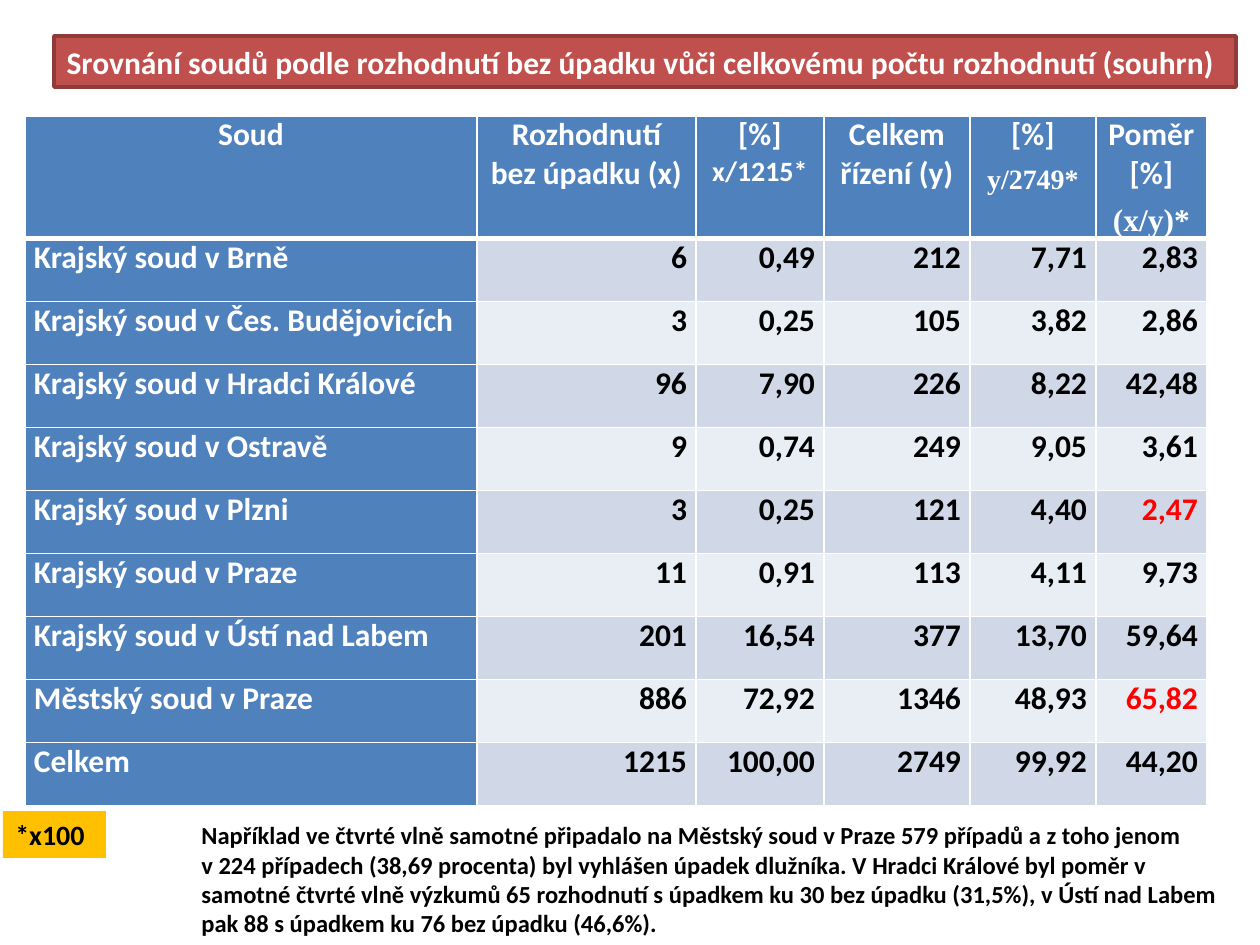
from lxml.etree import SubElement
from pptx import Presentation
from pptx.dml.color import RGBColor as RGB
from pptx.enum.shapes import MSO_SHAPE as Shape
from pptx.enum.text import MSO_ANCHOR as Anchor, MSO_AUTO_SIZE as Auto, PP_ALIGN as Align
from pptx.oxml.ns import qn
from pptx.util import Emu, Pt

WHITE = RGB(255, 255, 255)
BLACK = RGB(0, 0, 0)
BLUE = RGB(0x4F, 0x81, 0xBD)
BANDS = (RGB(0xD0, 0xD8, 0xE8), RGB(0xE9, 0xED, 0xF4))
RED = RGB(255, 0, 0)
BRICK = RGB(0xC0, 0x50, 0x4D)
MAROON = RGB(0x8E, 0x3B, 0x39)
AMBER = RGB(0xFF, 0xC0, 0)

SANS = "Calibri"
SERIF = "Times New Roman"
WIDTHS = (452, 219, 128, 146, 126, 111)
HEAD_H, ROW_H = 120, 63

TITLE = "Srovnání soudů podle rozhodnutí bez úpadku vůči celkovému počtu rozhodnutí (souhrn)"
HEADS = (
    [[("Soud", 18, SANS)]],
    [[("Rozhodnutí bez úpadku (x)", 18, SANS)]],
    [[("[%] ", 18, SANS), ("x/1215*", 16, SANS)]],
    [[("Celkem řízení (y)", 18, SANS)]],
    [[("[%]", 18, SANS)], [("y/2749*", 16, SERIF)]],
    [[("Poměr [%]", 18, SANS)], [("(x/y)*", 18, SERIF)]],
)
COURTS = (
    ("Krajský soud v Brně", "6", "0,49", "212", "7,71", "2,83"),
    ("Krajský soud v Čes. Budějovicích", "3", "0,25", "105", "3,82", "2,86"),
    ("Krajský soud v Hradci Králové", "96", "7,90", "226", "8,22", "42,48"),
    ("Krajský soud v Ostravě", "9", "0,74", "249", "9,05", "3,61"),
    ("Krajský soud v Plzni", "3", "0,25", "121", "4,40", "2,47"),
    ("Krajský soud v Praze", "11", "0,91", "113", "4,11", "9,73"),
    ("Krajský soud v Ústí nad Labem", "201", "16,54", "377", "13,70", "59,64"),
    ("Městský soud v Praze", "886", "72,92", "1346", "48,93", "65,82"),
    ("Celkem", "1215", "100,00", "2749", "99,92", "44,20"),
)
MARKED = ("2,47", "65,82")
NOTE = (
    "Například ve čtvrté vlně samotné připadalo na Městský soud v Praze 579 případů a z toho jenom",
    "v 224 případech (38,69 procenta) byl vyhlášen úpadek dlužníka. V Hradci Králové byl poměr v ",
    "samotné čtvrté vlně výzkumů 65 rozhodnutí s úpadkem ku 30 bez úpadku (31,5%), "
    "v Ústí nad Labem pak 88 s úpadkem ku 76 bez úpadku (46,6%).",
)


def px(n):
    return Emu(round(n * 914400 / 126))


def box(*sides):
    return [px(n) for n in sides]


def write(frame, paras, color, align=Align.LEFT, before=0):
    for i, runs in enumerate(paras):
        para = frame.add_paragraph() if i else frame.paragraphs[0]
        para.alignment = align
        para.space_before = Pt(before)
        for text, size, face in runs:
            run = para.add_run()
            run.text = text
            font = run.font
            font.size, font.name, font.bold = Pt(size), face, True
            font.color.rgb = color


def paint(shape, color):
    shape.fill.solid()
    shape.fill.fore_color.rgb = color


def edge(cell, top, bottom):
    props = cell._tc.get_or_add_tcPr()
    for side, width in (("L", 1), ("R", 1), ("T", top), ("B", bottom)):
        line = SubElement(props, qn(f"a:ln{side}"), w=str(Pt(width)))
        fill = SubElement(line, qn("a:solidFill"))
        SubElement(fill, qn("a:srgbClr"), val=str(WHITE))


def fill_cell(cell, row, paras, back, color, align):
    cell.margin_left = cell.margin_right = px(9)
    cell.margin_top = cell.margin_bottom = 0
    cell.vertical_anchor = Anchor.TOP
    edge(cell, 3 if row == 1 else 1, 3 if row == 0 else 1)
    paint(cell, back)
    write(cell.text_frame, paras, color, align, 6)


def add_title(slide):
    bar = slide.shapes.title
    bar.left, bar.top, bar.width, bar.height = box(54, 36, 1182, 51)
    paint(bar, BRICK)
    bar.line.color.rgb = MAROON
    bar.line.width = Pt(2)
    frame = bar.text_frame
    frame.word_wrap = False
    frame.auto_size = Auto.NONE
    frame.vertical_anchor = Anchor.MIDDLE
    write(frame, [[(TITLE, 18, SANS)]], WHITE)


def add_grid(slide):
    area = box(25, 116, sum(WIDTHS), HEAD_H + ROW_H * len(COURTS))
    grid = slide.shapes.add_table(len(COURTS) + 1, len(WIDTHS), *area).table
    for col, width in zip(grid.columns, WIDTHS):
        col.width = px(width)
    for i, row in enumerate(grid.rows):
        row.height = px(ROW_H if i else HEAD_H)
    for c, paras in enumerate(HEADS):
        fill_cell(grid.cell(0, c), 0, paras, BLUE, WHITE, Align.CENTER)
    for r, court in enumerate(COURTS, 1):
        for c, text in enumerate(court):
            if c == 0:
                look = (BLUE, WHITE, Align.LEFT)
            else:
                ink = RED if c == 5 and text in MARKED else BLACK
                look = (BANDS[(r - 1) % 2], ink, Align.RIGHT)
            fill_cell(grid.cell(r, c), r, [[(text, 18, SANS)]], *look)


def add_tag(slide):
    tag = slide.shapes.add_shape(Shape.RECTANGLE, *box(3, 811, 103, 47))
    tag.shadow.inherit = False
    paint(tag, AMBER)
    tag.line.fill.background()
    frame = tag.text_frame
    frame.word_wrap = True
    frame.vertical_anchor = Anchor.TOP
    write(frame, [[("*x100", 16, SANS)]], BLACK)


def add_note(slide):
    frame = slide.shapes.add_textbox(*box(189, 814, 1052, 131)).text_frame
    frame.word_wrap = True
    write(frame, [[(text, 14, SANS)] for text in NOTE], BLACK)


def main():
    deck = Presentation()
    deck.slide_width, deck.slide_height = box(1260, 945)
    slide = deck.slides.add_slide(deck.slide_layouts[5])
    add_grid(slide)
    add_title(slide)
    add_tag(slide)
    add_note(slide)
    deck.save("out.pptx")


if __name__ == "__main__":
    main()
